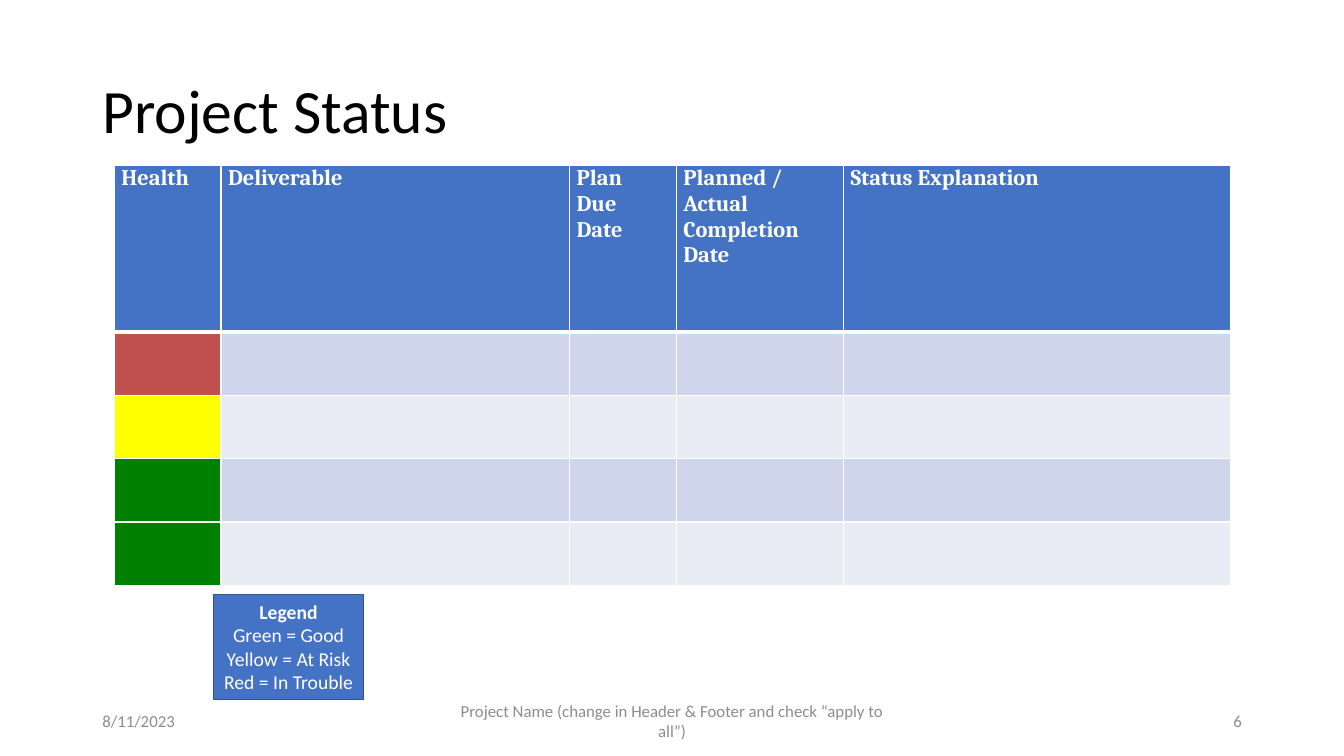
from lxml import etree
from pptx import Presentation
from pptx import util as u
from pptx.dml.color import RGBColor
from pptx.enum import shapes, text
from pptx.oxml.ns import qn

# Grid of 160 columns by 90 rows over a 13.33 x 7.5 inch slide
UNIT = u.Inches(7.5) / 90

COLORS = {
    "black": "000000", "white": "FFFFFF", "footer": "8C8C8C",
    "blue": "4472C4", "outline": "325491",
    "band_dark": "CFD5EA", "band_light": "E9EBF5",
    "red": "C0504D", "yellow": "FFFF00", "green": "008000",
}
HEADINGS = [
    ["Health"], ["Deliverable"], ["Plan", "Due", "Date"],
    ["Planned / Actual", "Completion", "Date"], ["Status Explanation"],
]
COLUMN_SPANS = [12.7, 41.5, 12.7, 19.9, 46.1]
HEADER_SPAN, ROW_SPAN = 19.8, 7.55
HEALTH = ["red", "yellow", "green", "green"]
LEGEND = ["Legend", "Green = Good", "Yellow = At Risk", "Red = In Trouble"]
FOOTER = [  # left column, column span, alignment, wording
    (11, 36, text.PP_ALIGN.LEFT, "8/11/2023"),
    (53, 54, text.PP_ALIGN.CENTER,
     "Project Name (change in Header & Footer and check “apply to all”)"),
    (113, 36, text.PP_ALIGN.RIGHT, "6"),
]


def grid(*spans):
    return [round(span * UNIT) for span in spans]


def color(key):
    return RGBColor.from_string(COLORS[key])


def apply(target, formats):
    for attribute, value in formats.items():
        setattr(target, attribute, value)


def fill(target, key):
    target.fill.solid()
    target.fill.fore_color.rgb = color(key)


def write(frame, lines, size, key, align=text.PP_ALIGN.LEFT,
          font="Calibri", bold_lines=0):
    """Put one paragraph per line, the first bold_lines of them bold."""
    for number, line in enumerate(lines):
        paragraph = frame.add_paragraph() if number else frame.paragraphs[0]
        paragraph.alignment = align
        run = paragraph.add_run()
        run.text = line
        apply(run.font, {"name": font, "size": u.Pt(size),
                         "bold": number < bold_lines})
        run.font.color.rgb = color(key)


def add_borders(cell, top, bottom):
    properties = cell._tc.get_or_add_tcPr()
    widths = {"a:lnL": 1, "a:lnR": 1, "a:lnT": top, "a:lnB": bottom}
    for place, (tag, points) in enumerate(widths.items()):
        edge = etree.Element(qn(tag), w=str(u.Pt(points)))
        solid = etree.SubElement(edge, qn("a:solidFill"))
        etree.SubElement(solid, qn("a:srgbClr"), val=COLORS["white"])
        properties.insert(place, edge)


def add_title(slide, wording):
    title = slide.shapes.title
    left, top, width, height = grid(11, 4.8, 138, 17.4)
    apply(title, {"left": left, "top": top, "width": width, "height": height})
    title.text_frame.vertical_anchor = text.MSO_ANCHOR.MIDDLE
    write(title.text_frame, [wording], 44, "black")
    title.text_frame.paragraphs[0].line_spacing = 0.9


def add_status_table(slide):
    height = HEADER_SPAN + ROW_SPAN * len(HEALTH)
    status = slide.shapes.add_table(
        len(HEALTH) + 1, len(HEADINGS),
        *grid(13.6, 19.7, sum(COLUMN_SPANS), height)).table
    for column, width in zip(status.columns, grid(*COLUMN_SPANS)):
        column.width = width
    row_spans = [HEADER_SPAN] + [ROW_SPAN] * len(HEALTH)
    for row, row_height in zip(status.rows, grid(*row_spans)):
        row.height = row_height

    # Header row
    margin = u.Inches(0.07)
    for column, lines in enumerate(HEADINGS):
        cell = status.cell(0, column)
        apply(cell, {"margin_left": margin, "margin_right": margin,
                     "margin_top": 0, "margin_bottom": 0})
        fill(cell, "blue")
        add_borders(cell, 1, 3)
        write(cell.text_frame, lines, 16, "white", font="Cambria",
              bold_lines=len(lines))

    # Deliverable rows: health colour, then alternating bands
    for row, health in enumerate(HEALTH, 1):
        band = "band_dark" if row % 2 else "band_light"
        for column in range(len(HEADINGS)):
            cell = status.cell(row, column)
            fill(cell, band if column else health)
            add_borders(cell, 3 if row == 1 else 1, 1)


def add_legend(slide):
    legend = slide.shapes.add_shape(
        shapes.MSO_SHAPE.RECTANGLE, *grid(25.4, 70.8, 17.9, 12.5))
    legend.shadow.inherit = False
    fill(legend, "blue")
    legend.line.color.rgb = color("outline")
    legend.line.width = u.Pt(1)
    apply(legend.text_frame, {"word_wrap": False,
                              "auto_size": text.MSO_AUTO_SIZE.SHAPE_TO_FIT_TEXT,
                              "vertical_anchor": text.MSO_ANCHOR.TOP})
    write(legend.text_frame, LEGEND, 14, "white",
          text.PP_ALIGN.CENTER, bold_lines=1)


def add_footer(slide):
    for left, width, align, wording in FOOTER:
        footer = slide.shapes.add_textbox(*grid(left, 83.4, width, 4.8))
        apply(footer.text_frame, {"word_wrap": True,
                                  "vertical_anchor": text.MSO_ANCHOR.MIDDLE})
        write(footer.text_frame, [wording], 12, "footer", align)


def main():
    deck = Presentation()
    apply(deck, {"slide_width": u.Inches(13.33),
                 "slide_height": u.Inches(7.5)})
    slide = deck.slides.add_slide(deck.slide_layouts.get_by_name("Title Only"))
    add_status_table(slide)
    add_title(slide, "Project Status")
    add_footer(slide)
    add_legend(slide)
    deck.save("out.pptx")


if __name__ == "__main__":
    main()
